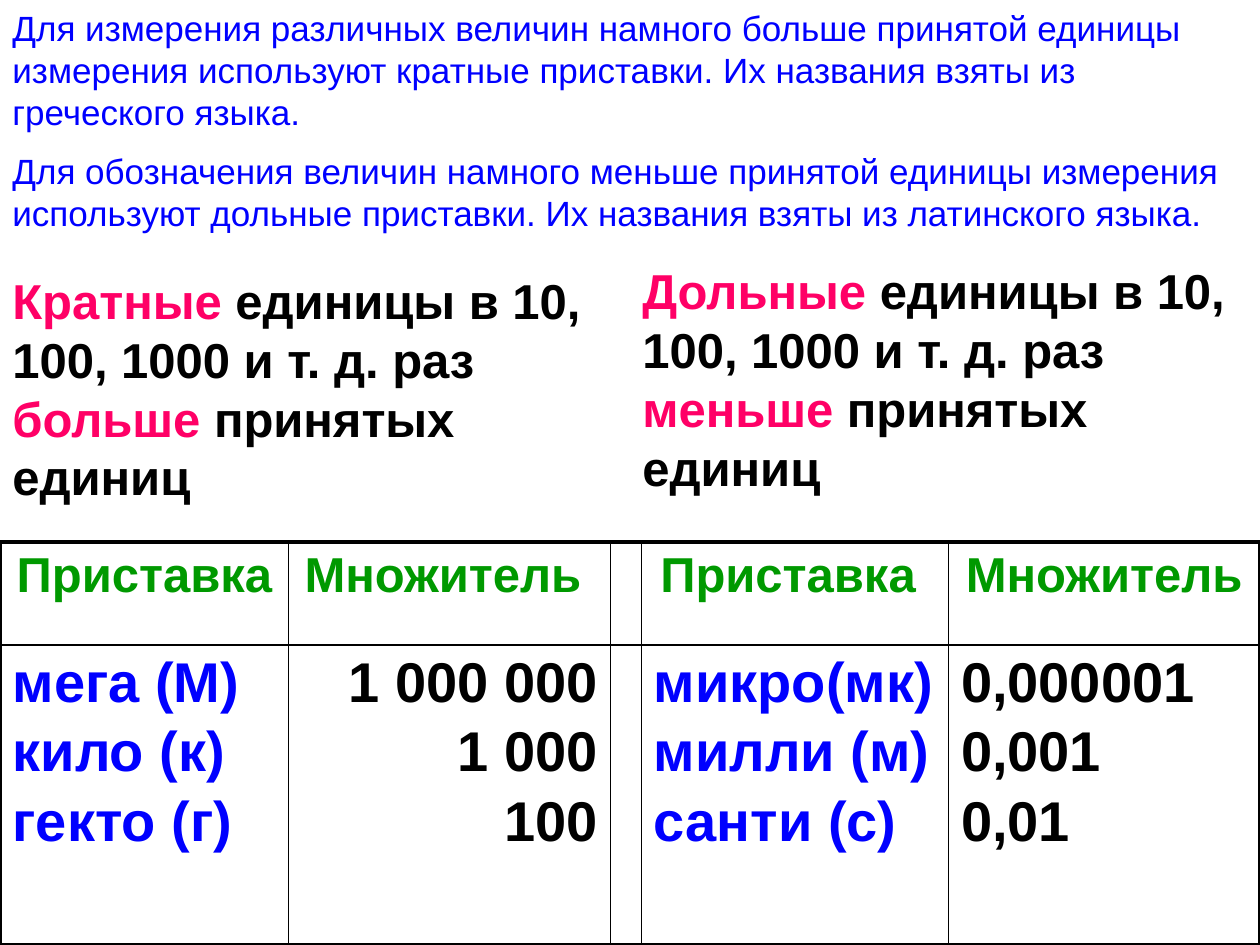
import dataclasses
import typing

import pptx
import pptx.dml.color
import pptx.enum.text
import pptx.oxml
import pptx.oxml.ns
import pptx.util

Pt = pptx.util.Pt
RGB = pptx.dml.color.RGBColor
Align = pptx.enum.text.PP_ALIGN


@dataclasses.dataclass(frozen=True)
class Theme:
    font: str = "Arial"
    blue: RGB = RGB(0, 0, 255)
    pink: RGB = RGB(255, 0, 102)
    green: RGB = RGB(0, 153, 0)
    black: RGB = RGB(0, 0, 0)
    intro_size: float = 20
    heading_size: float = 28
    value_size: float = 32
    intro_gap: float = 10
    value_gap: float = 4
    inner_line: float = 1
    outer_line: float = 2.25


THEME = Theme()


@dataclasses.dataclass(frozen=True)
class TextStyle:
    size: float
    color: RGB
    bold: bool = True
    align: Align = Align.LEFT
    gap: float = 0


@dataclasses.dataclass(frozen=True)
class Box:
    left: float
    top: float
    width: float
    height: float


@dataclasses.dataclass(frozen=True)
class Definition:
    box: Box
    kind: str
    comparison: str


@dataclasses.dataclass(frozen=True)
class Column:
    width: float
    heading: str = ""
    values: tuple[str, ...] = ()
    color: RGB = THEME.black
    align: Align = Align.LEFT


INTRO = (
    "Для измерения различных величин намного больше принятой единицы измерения "
    "используют кратные приставки. Их названия взяты из греческого языка.",
    "Для обозначения величин намного меньше принятой единицы измерения "
    "используют дольные приставки. Их названия взяты из латинского языка.",
)

DEFINITIONS = (
    Definition(Box(0, 151, 354, 142), "Кратные ", "больше "),
    Definition(Box(360, 145.5, 360, 142), "Дольные ", "меньше "),
)

COLUMNS = (
    Column(165, "Приставка ", ("мега (М)", "кило (к)", "гекто (г)"), THEME.blue),
    Column(184, "Множитель ", ("1 000 000", "1 000", "100"), align=Align.RIGHT),
    Column(17.5),
    Column(175.5, "Приставка ", ("микро(мк)", "милли (м)", "санти (с)"), THEME.blue),
    Column(178, "Множитель ", ("0,000001", "0,001", "0,01")),
)
ROW_HEIGHTS = (59, 171.4)
TABLE_TOP = 309.6


def style_paragraph(paragraph: typing.Any, style: TextStyle) -> None:
    paragraph.alignment = style.align
    paragraph.font.name = THEME.font
    paragraph.font.size = Pt(style.size)
    paragraph.font.bold = style.bold
    paragraph.font.color.rgb = style.color


def write_lines(frame: typing.Any, lines: tuple[str, ...], style: TextStyle) -> None:
    for index, line in enumerate(lines):
        paragraph = frame.add_paragraph() if index else frame.paragraphs[0]
        paragraph.space_before = Pt(style.gap if index else 0)
        style_paragraph(paragraph, style)
        paragraph.add_run().text = line


def add_text_frame(slide: typing.Any, box: Box) -> typing.Any:
    frame = slide.shapes.add_textbox(
        Pt(box.left), Pt(box.top), Pt(box.width), Pt(box.height)
    ).text_frame
    frame.word_wrap = True
    frame.auto_size = pptx.enum.text.MSO_AUTO_SIZE.SHAPE_TO_FIT_TEXT
    return frame


def draw_definition(slide: typing.Any, definition: Definition) -> None:
    paragraph = add_text_frame(slide, definition.box).paragraphs[0]
    style_paragraph(paragraph, TextStyle(THEME.heading_size, THEME.black))
    for phrase, color in (
        (definition.kind, THEME.pink),
        ("единицы в 10, 100, 1000 и т. д. раз ", THEME.black),
        (definition.comparison, THEME.pink),
        ("принятых единиц", THEME.black),
    ):
        run = paragraph.add_run()
        run.text = phrase
        run.font.color.rgb = color


def draw_borders(cell: typing.Any, outer_sides: dict[str, bool]) -> None:
    properties = cell._tc.get_or_add_tcPr()
    for side, is_outer in outer_sides.items():
        width = Pt(THEME.outer_line if is_outer else THEME.inner_line)
        properties.append(pptx.oxml.parse_xml(
            f'<a:ln{side} {pptx.oxml.ns.nsdecls("a")} w="{width}"><a:solidFill>'
            f'<a:srgbClr val="{THEME.black}"/></a:solidFill></a:ln{side}>'
        ))
    cell.fill.background()


def draw_prefix_table(slide: typing.Any) -> None:
    table = slide.shapes.add_table(
        len(ROW_HEIGHTS), len(COLUMNS), 0, Pt(TABLE_TOP),
        Pt(sum(column.width for column in COLUMNS)), Pt(sum(ROW_HEIGHTS)),
    ).table
    table.first_row = False
    table.horz_banding = False
    for row, height in zip(table.rows, ROW_HEIGHTS):
        row.height = Pt(height)
    for index, column in enumerate(COLUMNS):
        table.columns[index].width = Pt(column.width)
        heading_cell, value_cell = table.cell(0, index), table.cell(1, index)
        for cell, is_top in ((heading_cell, True), (value_cell, False)):
            draw_borders(cell, {
                "L": index == 0,
                "R": index == len(COLUMNS) - 1,
                "T": is_top,
                "B": not is_top,
            })
        if column.heading:
            write_lines(heading_cell.text_frame, (column.heading,),
                        TextStyle(THEME.heading_size, THEME.green, align=Align.CENTER))
        write_lines(value_cell.text_frame, column.values,
                    TextStyle(THEME.value_size, column.color,
                              align=column.align, gap=THEME.value_gap))


def main() -> None:
    presentation = pptx.Presentation()
    presentation.slide_width = Pt(720)
    presentation.slide_height = Pt(540)
    slide = presentation.slides.add_slide(presentation.slide_layouts[6])
    for definition in DEFINITIONS:
        draw_definition(slide, definition)
    draw_prefix_table(slide)
    write_lines(add_text_frame(slide, Box(0, 0, 720, 139)), INTRO,
                TextStyle(THEME.intro_size, THEME.blue, bold=False, gap=THEME.intro_gap))
    presentation.save("out.pptx")


if __name__ == "__main__":
    main()
